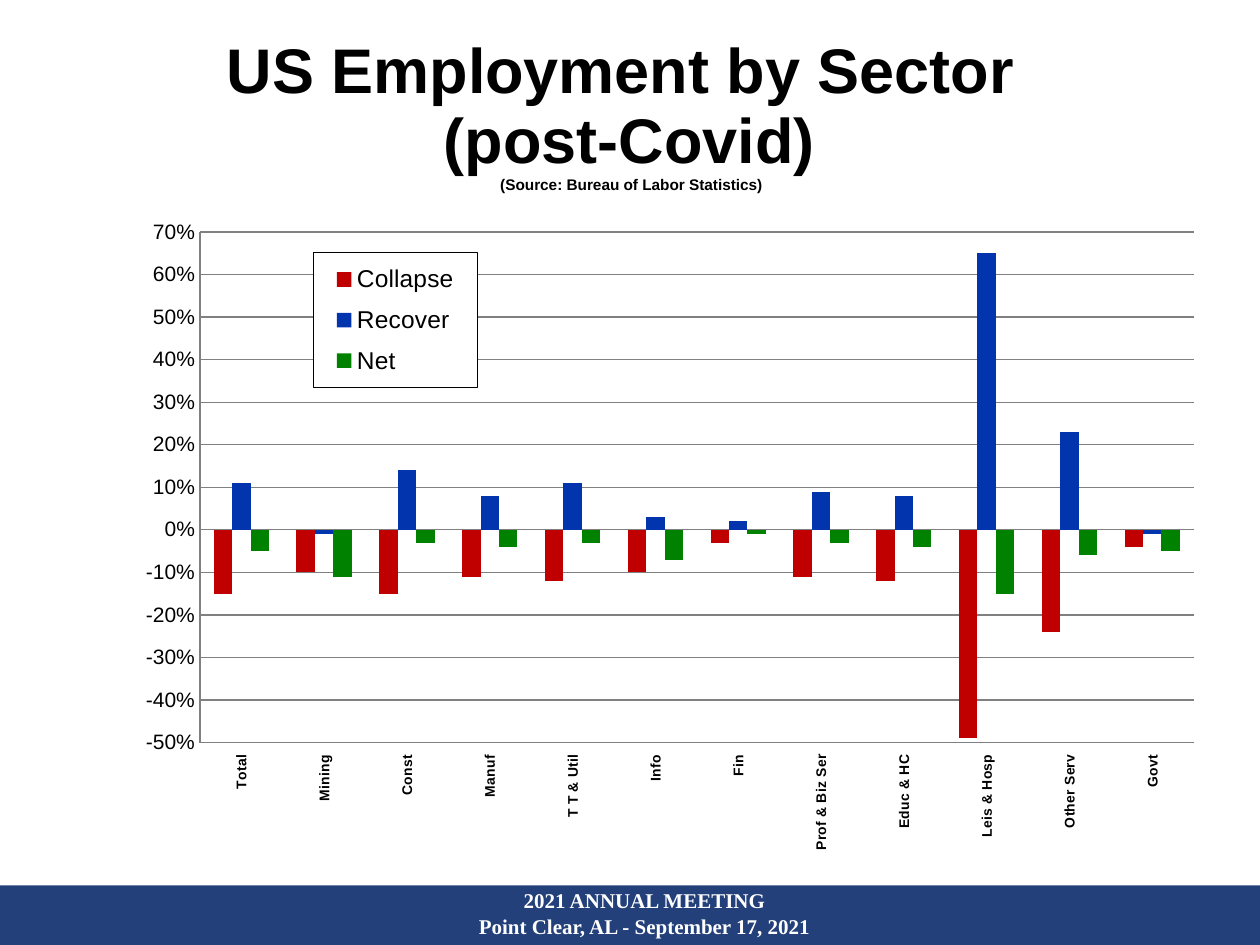
"""Build the slide on US employment by sector after Covid."""
import copy
from dataclasses import dataclass

import pptx
import pptx.chart.data
import pptx.dml.color
import pptx.enum.chart
import pptx.enum.shapes
import pptx.enum.text
import pptx.oxml
import pptx.oxml.ns
import pptx.util

WIDE, HIGH = 10, 7.5
HUES = {"ink": "000000", "paper": "FFFFFF", "band": "23407A", "grid": "808080",
        "fall": "C00000", "rise": "0234AD", "net": "008200"}
SPACES = pptx.oxml.ns.nsdecls("a", "c")
CENTER = pptx.enum.text.PP_ALIGN.CENTER
MIDDLE = pptx.enum.text.MSO_ANCHOR.MIDDLE


@dataclass
class Box:
    """Hold a frame as shares of its parent's size."""
    x: float
    y: float
    w: float
    h: float

    def frame(self) -> tuple:
        """Return the frame in slide lengths."""
        return tuple(pptx.util.Inches(part * full) for part, full in
                     zip((self.x, self.y, self.w, self.h), (WIDE, HIGH) * 2))

    def layout(self, inner: bool = False):
        """Return the frame as a manual chart layout."""
        target = '<c:layoutTarget val="inner"/>' if inner else ""
        modes = '<c:xMode val="edge"/><c:yMode val="edge"/>'
        sizes = "".join(f'<c:{name} val="{getattr(self, name)}"/>' for name in "xywh")
        return pptx.oxml.parse_xml(f"<c:layout {SPACES}><c:manualLayout>{target}{modes}"
                                   f"{sizes}</c:manualLayout></c:layout>")


@dataclass
class Group:
    """Hold one series of bars, in percent."""
    name: str
    hue: str
    rates: tuple


SECTORS = ("Total", "Mining", "Const", "Manuf", "T T & Util", "Info", "Fin",
           "Prof & Biz Ser", "Educ & HC", "Leis & Hosp", "Other Serv", "Govt")
GROUPS = (
    Group("Collapse", "fall", (-15, -10, -15, -11, -12, -10, -3, -11, -12, -49, -24, -4)),
    Group("Recover", "rise", (11, -1, 14, 8, 11, 3, 2, 9, 8, 65, 23, -1)),
    Group("Net", "net", (-5, -11, -3, -4, -3, -7, -1, -3, -4, -15, -6, -5)),
)


def color(name: str) -> pptx.dml.color.RGBColor:
    """Return a named colour."""
    return pptx.dml.color.RGBColor.from_string(HUES[name])


def style(font, size: float, hue: str = "ink", bold: bool = False, face: str = "Arial") -> None:
    """Set the look of a font."""
    font.name, font.size, font.bold = face, pptx.util.Pt(size), bold
    font.color.rgb = color(hue)


def head(slide) -> None:
    """Fill the title with its heading and source."""
    shape = slide.shapes.title
    shape.left, shape.top, shape.width, shape.height = Box(0.083, 0.077, 0.833, 0.092).frame()
    text = shape.text_frame
    text.text = "US Employment by Sector \v(post-Covid)\v (Source: Bureau of Labor Statistics)"
    text.vertical_anchor = MIDDLE
    text.auto_size = pptx.enum.text.MSO_AUTO_SIZE.NONE
    line = text.paragraphs[0]
    line.alignment, line.line_spacing = CENTER, 0.92
    for run, size in zip(line.runs, (36, 36, 8.8)):
        style(run.font, size, bold=True)
    for gap in line._p.findall(pptx.oxml.ns.qn("a:br")):
        gap.append(copy.deepcopy(line.runs[0]._r.rPr))


def foot(slide) -> None:
    """Draw the band with the meeting's name and place."""
    band = slide.shapes.add_shape(pptx.enum.shapes.MSO_SHAPE.RECTANGLE,
                                  *Box(0, 0.937, 1, 0.063).frame())
    band.shadow.inherit = False
    band.fill.solid()
    band.fill.fore_color.rgb = color("band")
    band.line.fill.background()
    text = slide.shapes.add_textbox(*Box(0.224, 0.933, 0.575, 0.069).frame()).text_frame
    text.word_wrap = True
    text.text = "2021 ANNUAL MEETING\nPoint Clear, AL - September 17, 2021"
    for line in text.paragraphs:
        line.alignment = CENTER
        style(line.runs[0].font, 12, "paper", True, "Times New Roman")


def axes(chart) -> None:
    """Set the scale, grid and labels of both axes."""
    base, scale = chart.category_axis, chart.value_axis
    scale.minimum_scale, scale.maximum_scale, scale.major_unit = -0.5, 0.7, 0.1
    scale.has_major_gridlines = True
    scale.major_gridlines.format.line.color.rgb = color("grid")
    scale.tick_labels.number_format = "0%"
    scale.tick_labels.number_format_is_linked = False
    base.tick_label_position = pptx.enum.chart.XL_TICK_LABEL_POSITION.LOW
    for axis, size, bold in ((base, 8, True), (scale, 12, False)):
        axis.major_tick_mark = axis.minor_tick_mark = pptx.enum.chart.XL_TICK_MARK.NONE
        axis.format.line.color.rgb = color("grid")
        style(axis.tick_labels.font, size, bold=bold)
    turn = base._element.find(pptx.oxml.ns.qn("c:txPr")).find(pptx.oxml.ns.qn("a:bodyPr"))
    turn.set("rot", "-5400000")
    turn.set("vert", "horz")


def key(chart) -> None:
    """Place the framed legend over the plot."""
    chart.has_legend = True
    legend = chart.legend
    legend.position = pptx.enum.chart.XL_LEGEND_POSITION.RIGHT
    legend.include_in_layout = False
    style(legend.font, 14)
    root = legend._element
    root.find(pptx.oxml.ns.qn("c:legendPos")).addnext(Box(0.175, 0.052, 0.153, 0.216).layout())
    fill, edge = (f'<a:solidFill><a:srgbClr val="{HUES[name]}"/></a:solidFill>'
                  for name in ("paper", "ink"))
    root.find(pptx.oxml.ns.qn("c:txPr")).addprevious(pptx.oxml.parse_xml(
        f'<c:spPr {SPACES}>{fill}<a:ln w="9525">{edge}</a:ln></c:spPr>'))


def plot(slide) -> None:
    """Draw the column chart."""
    data = pptx.chart.data.CategoryChartData(number_format="0%")
    data.categories = SECTORS
    for group in GROUPS:
        data.add_series(group.name, [rate / 100 for rate in group.rates])
    chart = slide.shapes.add_chart(pptx.enum.chart.XL_CHART_TYPE.COLUMN_CLUSTERED,
                                   *Box(0.1, 0.233, 0.85, 0.667).frame(), data).chart
    chart.has_title = False
    style(chart.font, 8)
    bars = chart.plots[0]
    bars.gap_width, bars.overlap, bars.vary_by_categories = 150, 0, False
    for group, series in zip(GROUPS, bars.series):
        series.invert_if_negative = False
        series.format.fill.solid()
        series.format.fill.fore_color.rgb = color(group.hue)
    axes(chart)
    key(chart)
    area = chart._chartSpace.chart.plotArea
    for old in area.findall(pptx.oxml.ns.qn("c:layout")):
        area.remove(old)
    area.insert(0, Box(0.069, 0.019, 0.928, 0.817).layout(inner=True))


def main() -> None:
    """Build and save the slide."""
    deck = pptx.Presentation()
    deck.slide_width, deck.slide_height = pptx.util.Inches(WIDE), pptx.util.Inches(HIGH)
    slide = deck.slides.add_slide(deck.slide_layouts[5])
    foot(slide)
    head(slide)
    plot(slide)
    deck.save("out.pptx")


if __name__ == "__main__":
    main()
